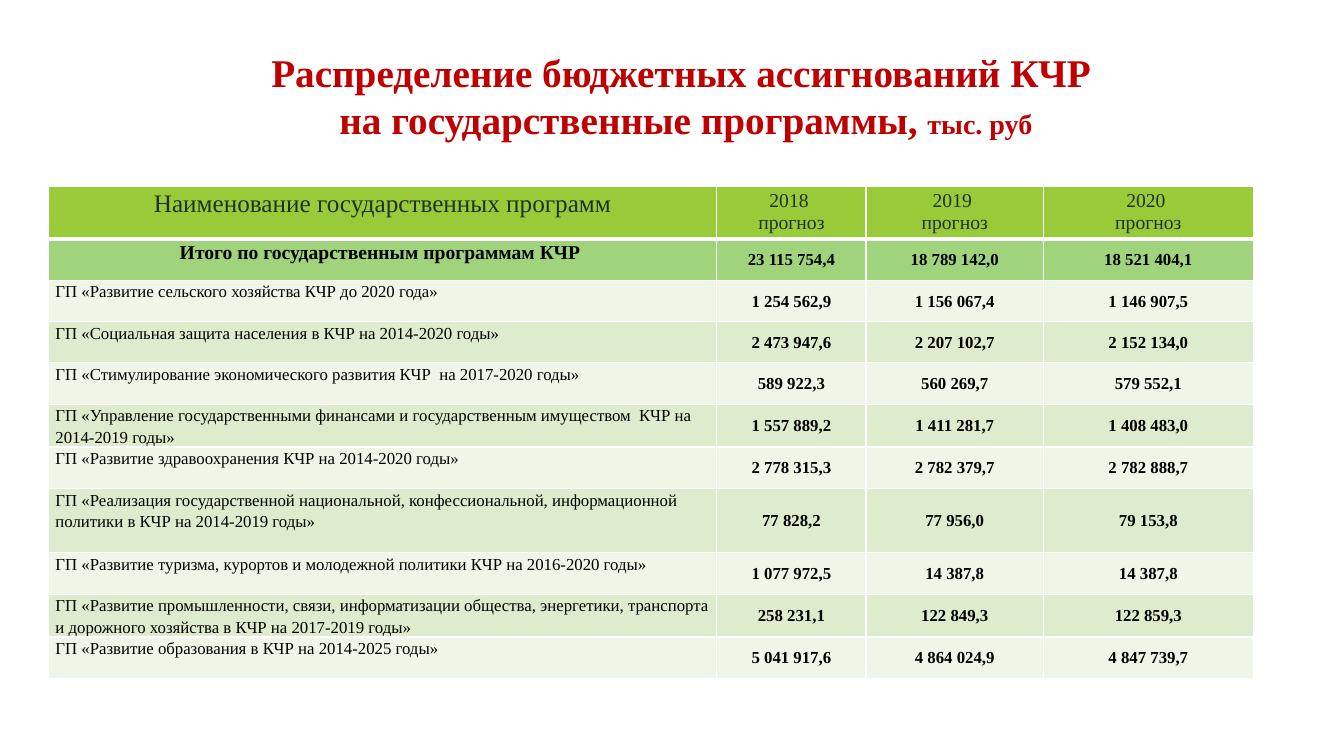
from dataclasses import dataclass

import pptx
import pptx.dml.color
import pptx.enum.text
import pptx.oxml
import pptx.oxml.ns
import pptx.util

Inches = pptx.util.Inches
Pt = pptx.util.Pt
CENTER = pptx.enum.text.PP_ALIGN.CENTER
LEFT = pptx.enum.text.PP_ALIGN.LEFT
TOP = pptx.enum.text.MSO_ANCHOR.TOP
MIDDLE = pptx.enum.text.MSO_ANCHOR.MIDDLE

FONT = "Times New Roman"
TITLE_RED = "C00000"
HEADER_TEXT = "223028"
BLACK = "000000"
WHITE = "FFFFFF"
HEADER_FILL = "99CB38"
TOTAL_FILL = "9FD47D"
BAND_FILLS = ("EFF6E8", "DEECCE")
COLUMN_WIDTHS = (6.63, 1.48, 1.76, 2.08)
YEARS = ("2018 ", "2019 ", "2020 ")
HEADER_HEIGHT = 0.52


@dataclass(frozen=True)
class Program:
    name: str
    amounts: tuple[str, str, str]
    height: float = 0.41


TOTAL = Program("Итого по государственным программам КЧР ", ("23 115 754,4", "18 789 142,0", "18 521 404,1"))
PROGRAMS = (
    Program("ГП «Развитие сельского хозяйства КЧР до 2020 года»", ("1 254 562,9", "1 156 067,4", "1 146 907,5")),
    Program("ГП «Социальная защита населения в КЧР на 2014-2020 годы»", ("2 473 947,6", "2 207 102,7", "2 152 134,0")),
    Program("ГП «Стимулирование экономического развития КЧР  на 2017-2020 годы»", ("589 922,3", "560 269,7", "579 552,1")),
    Program(
        "ГП «Управление государственными финансами и государственным имуществом  КЧР на 2014-2019 годы»",
        ("1 557 889,2", "1 411 281,7", "1 408 483,0"),
    ),
    Program("ГП «Развитие здравоохранения КЧР на 2014-2020 годы»", ("2 778 315,3", "2 782 379,7", "2 782 888,7")),
    Program(
        "ГП «Реализация государственной национальной, конфессиональной, информационной политики в КЧР на 2014-2019 годы»",
        ("77 828,2", "77 956,0", "79 153,8"),
        height=0.64,
    ),
    Program("ГП «Развитие туризма, курортов и молодежной политики КЧР на 2016-2020 годы»", ("1 077 972,5", "14 387,8", "14 387,8")),
    Program(
        "ГП «Развитие промышленности, связи, информатизации общества, энергетики, "
        "транспорта и дорожного хозяйства в КЧР на 2017-2019 годы»",
        ("258 231,1", "122 849,3", "122 859,3"),
    ),
    Program("ГП «Развитие образования в КЧР на 2014-2025 годы»", ("5 041 917,6", "4 864 024,9", "4 847 739,7")),
)


def color(value: str) -> pptx.dml.color.RGBColor:
    return pptx.dml.color.RGBColor.from_string(value)


def add_text(para, text: str, *, size: float, ink: str = BLACK, bold: bool = False,
             align=CENTER, line_spacing: float = 1.0, space_after: float = 0) -> None:
    para.alignment = align
    para.line_spacing = line_spacing
    para.space_after = Pt(space_after)
    span = para.add_run()
    span.text = text
    span.font.name = FONT
    span.font.size = Pt(size)
    span.font.bold = bold
    span.font.color.rgb = color(ink)


def style_cell(cell, fill: str, *, margins: tuple[float, float, float] = (0.07, 0, 0),
               anchor=TOP, bottom_border: float = 1) -> None:
    side, top, bottom = margins
    cell.margin_left = cell.margin_right = Inches(side)
    cell.margin_top, cell.margin_bottom = Inches(top), Inches(bottom)
    cell.vertical_anchor = anchor
    properties = cell._tc.get_or_add_tcPr()
    for edge, width in (("L", 1), ("R", 1), ("T", 1), ("B", bottom_border)):
        properties.append(pptx.oxml.parse_xml(
            f'<a:ln{edge} {pptx.oxml.ns.nsdecls("a")} w="{Pt(width)}"><a:solidFill>'
            f'<a:srgbClr val="{WHITE}"/></a:solidFill></a:ln{edge}>'))
    cell.fill.solid()
    cell.fill.fore_color.rgb = color(fill)


def add_title(page) -> None:
    box = page.shapes.add_textbox(Inches(2.55), Inches(0.43), Inches(8.41), Inches(1.04))
    frame = box.text_frame
    frame.word_wrap = False
    frame.auto_size = pptx.enum.text.MSO_AUTO_SIZE.SHAPE_TO_FIT_TEXT
    add_text(frame.paragraphs[0], "Распределение бюджетных ассигнований КЧР", size=28, ink=TITLE_RED, bold=True)
    para = frame.add_paragraph()
    add_text(para, " на государственные программы, ", size=28, ink=TITLE_RED, bold=True)
    add_text(para, "тыс. руб", size=20, ink=TITLE_RED, bold=True)


def fill_header(table) -> None:
    for column in range(len(COLUMN_WIDTHS)):
        style_cell(table.cell(0, column), HEADER_FILL, margins=(0.1, 0.04, 0.03), bottom_border=3)
    add_text(table.cell(0, 0).text_frame.paragraphs[0], "Наименование государственных программ",
             size=18, ink=HEADER_TEXT)
    for column, year in enumerate(YEARS, start=1):
        frame = table.cell(0, column).text_frame
        add_text(frame.paragraphs[0], year, size=14, ink=HEADER_TEXT)
        add_text(frame.add_paragraph(), "прогноз", size=14, ink=HEADER_TEXT)


def fill_program(table, row: int, program: Program) -> None:
    is_total = program is TOTAL
    fill = TOTAL_FILL if is_total else BAND_FILLS[row % 2]
    name_cell = table.cell(row, 0)
    style_cell(name_cell, fill)
    add_text(name_cell.text_frame.paragraphs[0], program.name, size=14 if is_total else 12,
             bold=is_total, align=CENTER if is_total else LEFT, line_spacing=1.15)
    for column, amount in enumerate(program.amounts, start=1):
        cell = table.cell(row, column)
        style_cell(cell, fill, anchor=MIDDLE)
        add_text(cell.text_frame.paragraphs[0], amount, size=12, bold=True, line_spacing=1.07, space_after=8)


def add_budget_table(page) -> None:
    programs = (TOTAL, *PROGRAMS)
    heights = (HEADER_HEIGHT, *(program.height for program in programs))
    table = page.shapes.add_table(len(heights), len(COLUMN_WIDTHS), Inches(0.48), Inches(1.85),
                                  Inches(sum(COLUMN_WIDTHS)), Inches(sum(heights))).table
    table.first_row = table.horz_banding = False
    for column, width in zip(table.columns, COLUMN_WIDTHS):
        column.width = Inches(width)
    for row, height in zip(table.rows, heights):
        row.height = Inches(height)
    fill_header(table)
    for row, program in enumerate(programs, start=1):
        fill_program(table, row, program)


def main() -> None:
    deck = pptx.Presentation()
    deck.slide_width, deck.slide_height = Inches(13.33), Inches(7.5)
    page = deck.slides.add_slide(deck.slide_layouts[6])
    add_budget_table(page)
    add_title(page)
    deck.save("out.pptx")


if __name__ == "__main__":
    main()
